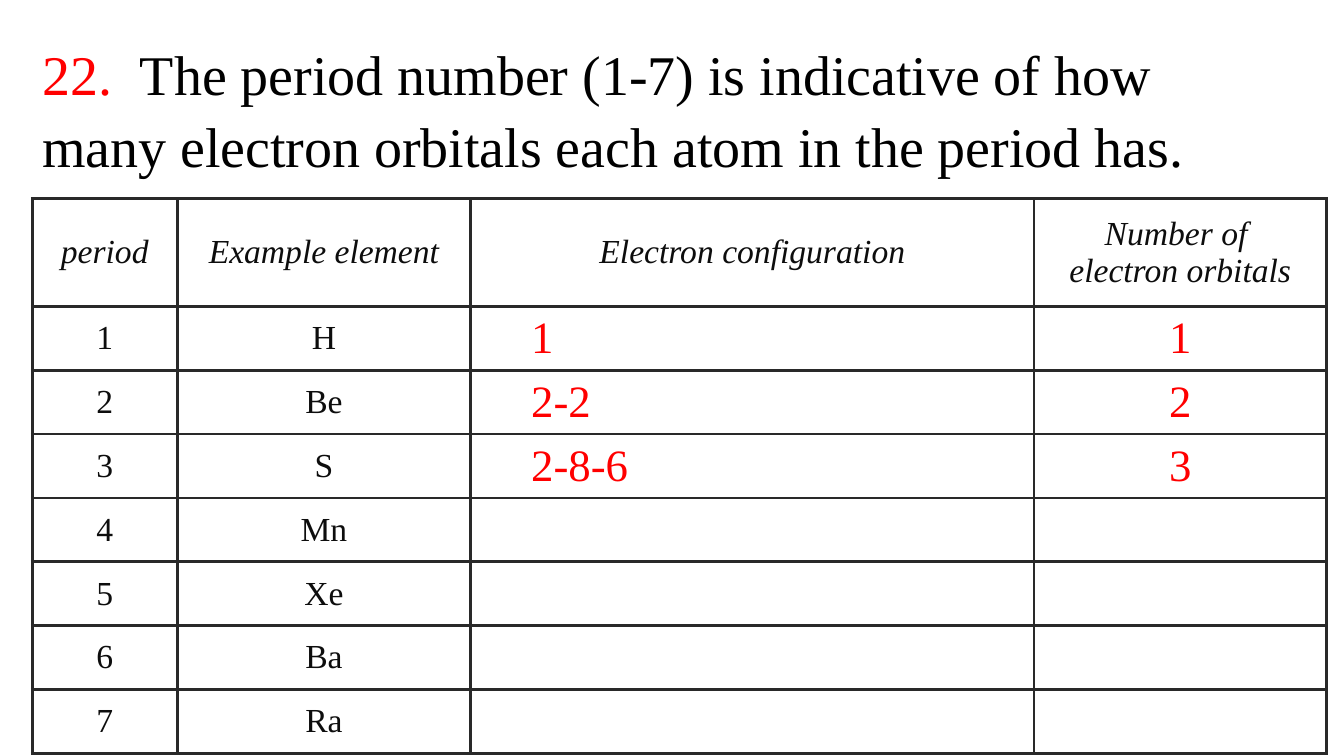
from lxml.etree import SubElement
from pptx import Presentation
from pptx.dml.color import RGBColor as RGB
from pptx.enum.text import MSO_ANCHOR as Anchor, PP_ALIGN as Align
from pptx.oxml.ns import qn
from pptx.util import Pt

COLORS = {"ink": "000000", "cell": "0D0D0D", "answer": "FF0000", "grid": "292929"}
FONT = "Times New Roman"


class Deck:
    def __init__(self, width, height):
        self.prs = Presentation()
        self.prs.slide_width, self.prs.slide_height = Pt(width), Pt(height)
        self.s = self.prs.slides.add_slide(self.prs.slide_layouts[6])

    def style(self, r, size, color, italic=False):
        r.font.name, r.font.size = FONT, Pt(size)
        r.font.bold, r.font.italic = False, italic
        r.font.color.rgb = RGB.from_string(COLORS[color])

    def text(self, x, y, w, h, parts, size):
        tf = self.s.shapes.add_textbox(Pt(x), Pt(y), Pt(w), Pt(h)).text_frame
        tf.word_wrap = True
        p = tf.paragraphs[0]
        p.line_spacing = 1.07
        for words, color in parts:
            r = p.add_run()
            r.text = words
            self.style(r, size, color)

    def table(self, x, y, widths, heights):
        frame = self.s.shapes.add_table(len(heights), len(widths), Pt(x), Pt(y),
                                        Pt(sum(widths)), Pt(sum(heights)))
        table = frame.table
        table.first_row = table.horz_banding = False
        for column, width in zip(table.columns, widths):
            column.width = Pt(width)
        for row, height in zip(table.rows, heights):
            row.height = Pt(height)
        for cell in table.iter_cells():
            self.borders(cell, 2.25)
            cell.fill.background()
            cell.vertical_anchor = Anchor.MIDDLE
        return table

    def borders(self, cell, width):
        tcPr = cell._tc.get_or_add_tcPr()
        for side in "LRTB":
            ln = SubElement(tcPr, qn(f"a:ln{side}"), w=str(Pt(width)))
            fill = SubElement(ln, qn("a:solidFill"))
            SubElement(fill, qn("a:srgbClr"), val=COLORS["grid"])

    def cell(self, cell, words, size, color, italic=False, indent=0):
        p = cell.text_frame.paragraphs[0]
        p.text = words
        p.alignment = Align.LEFT if indent else Align.CENTER
        if indent:
            pPr = p._p.get_or_add_pPr()
            pPr.set("marL", str(Pt(indent)))
            pPr.set("indent", "0")
        for r in p.runs:
            self.style(r, size, color, italic)


def main():
    deck = Deck(960, 540)

    # Statement
    deck.text(23, 21.6, 880, 147.6, [
        ("22.  ", "answer"),
        ("The period number (1-7) is indicative of how many electron orbitals "
         "each atom in the period has.", "ink"),
    ], 40)

    # Table of periods
    headings = ["period", "Example element", "Electron configuration",
                "Number of \nelectron orbitals"]
    elements = ["H", "Be", "S", "Mn", "Xe", "Ba", "Ra"]
    configurations = ["1", "2-2", "2-8-6"]
    table = deck.table(23, 141.8, [103.7, 209.5, 402.5, 208.8],
                       [77] + [45.6] * len(elements))
    for column, heading in enumerate(headings):
        deck.cell(table.cell(0, column), heading, 24, "cell", italic=True)
    for period, element in enumerate(elements, 1):
        deck.cell(table.cell(period, 0), str(period), 24, "cell")
        deck.cell(table.cell(period, 1), element, 24, "cell")

    # Answers filled in so far
    for period, configuration in enumerate(configurations, 1):
        deck.cell(table.cell(period, 2), configuration, 32, "answer", indent=36)
        deck.cell(table.cell(period, 3), str(period), 32, "answer")

    deck.prs.save("out.pptx")


if __name__ == "__main__":
    main()
